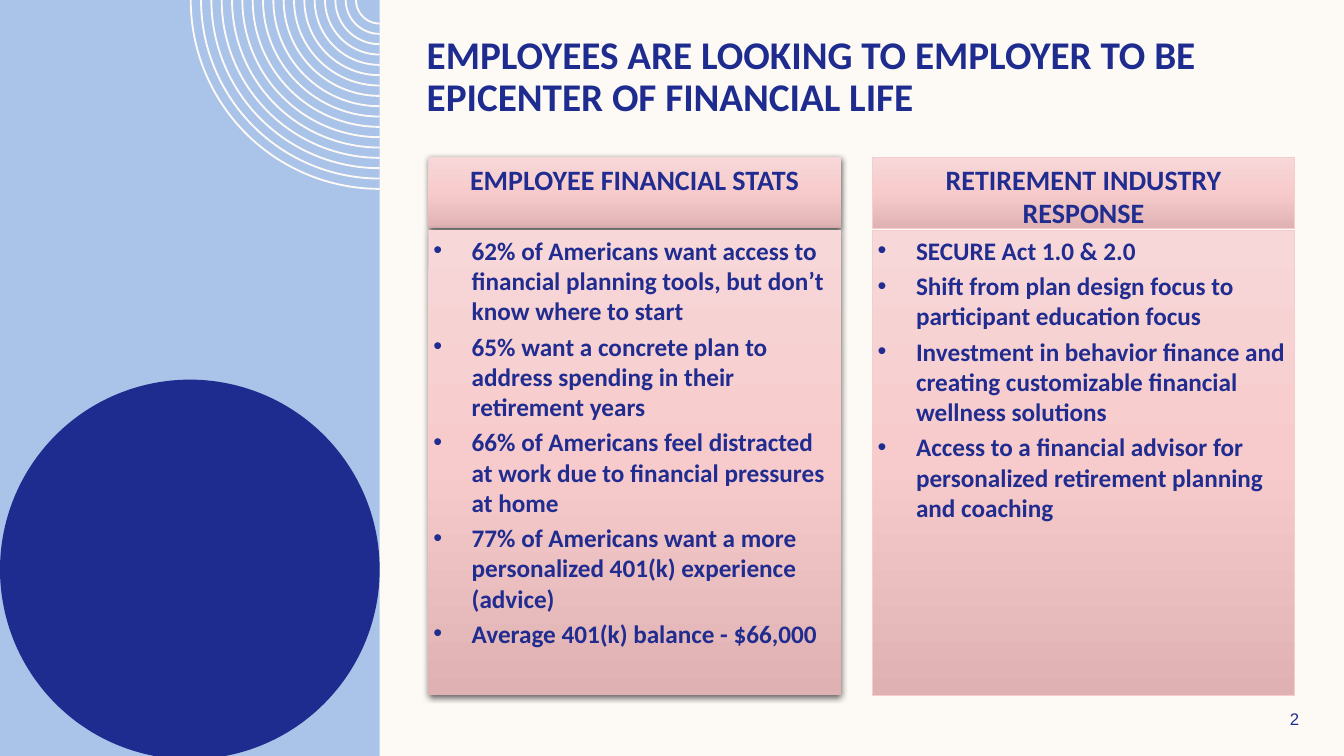
from collections import namedtuple

from lxml import etree
from pptx import Presentation
from pptx.dml.color import RGBColor
from pptx.enum.shapes import MSO_SHAPE as Preset
from pptx.enum.text import MSO_ANCHOR as Anchor, PP_ALIGN as Align
from pptx.oxml.ns import qn
from pptx.util import Inches, Pt

COLORS = {
    "cream": "FDFAF6", "sky": "AAC3E8", "navy": "1F2C8F", "ink": "202C8F",
    "card_top": "F7D7D8", "card_middle": "F7CBCC", "card_bottom": "DFB1B2",
    "card_edge": "F5CDCE", "shadow": "000000",
}
COLUMNS, ROWS = 160, 90
CELL = Inches(7.5) / ROWS
HEADER_ROWS, HEADER_GAP = 8.5, 0.2
RING_COUNT, RING_STEP, RING_WIDTH = 17, 1.23, 0.22

Box = namedtuple("Box", "left top width height")
SIDE_PANEL = Box(0, 0, 45.2, ROWS)
TITLE = Box(49.6, 3.6, 108.6, 10.1)
STATS = Box(51, 18.7, 49.1, 64.1)
RESPONSE = Box(103.9, 18.7, 50.2, 64.1)
PAGE_NUMBER = Box(148.1, 83.8, 12, 3.6)

STATS_POINTS = [
    "62% of Americans want access to financial planning tools, but don’t know where to start",
    "65% want a concrete plan to address spending in their retirement years",
    "66% of Americans feel distracted at work due to financial pressures at home",
    "77% of Americans want a more personalized 401(k) experience (advice)",
    "Average 401(k) balance - $66,000",
]
RESPONSE_POINTS = [
    "SECURE Act 1.0 & 2.0",
    "Shift from plan design focus to participant education focus",
    "Investment in behavior finance and creating customizable financial wellness solutions",
    "Access to a financial advisor for personalized retirement planning and coaching",
]


def cells(count):
    return round(count * CELL)


def place(box):
    return [cells(length) for length in box]


def color(name):
    return RGBColor.from_string(COLORS[name])


def style(paragraph, size, ink, bold=True, face="Calibri"):
    for run in paragraph.runs:
        run.font.name = face
        run.font.size = Pt(size)
        run.font.bold = bold
        run.font.color.rgb = color(ink)


def add_plain(slide, preset, box, fill):
    plain = slide.shapes.add_shape(preset, *place(box))
    plain.shadow.inherit = False
    plain.fill.solid()
    plain.fill.fore_color.rgb = color(fill)
    plain.line.fill.background()


def add_rings(slide, center_column, outer_radius):
    radii = [cells(outer_radius - RING_WIDTH / 2 - index * RING_STEP)
             for index in range(RING_COUNT)]
    center = cells(center_column)
    builder = slide.shapes.build_freeform(center - radii[0], 0, scale=1.0)
    for index, radius in enumerate(radii):
        if index:
            builder.move_to(center - radius, 0)
        builder.add_line_segments([(center, radius)], close=False)
    rings = builder.convert_to_shape()
    segments = list(rings._element.spPr.iter(qn("a:lnTo")))
    for segment, radius in zip(segments, radii):
        quarter = etree.Element(qn("a:arcTo"), wR=str(radius), hR=str(radius),
                                stAng="10800000", swAng="-5400000")
        segment.getparent().replace(segment, quarter)
    rings.shadow.inherit = False
    rings.fill.background()
    rings.line.color.rgb = color("cream")
    rings.line.width = cells(RING_WIDTH)


def add_side_panel(slide, box):
    add_plain(slide, Preset.RECTANGLE, box, "sky")
    add_rings(slide, box.left + box.width, box.width / 2)
    add_plain(slide, Preset.OVAL, Box(box.left, box.width, box.width, box.width), "navy")


def fill_gradient(card):
    card.fill.gradient()
    card.fill.gradient_angle = 270
    stops = card._element.spPr.find(qn("a:gradFill")).find(qn("a:gsLst"))
    for stop in list(stops):
        stops.remove(stop)
    for position, name in enumerate(("card_top", "card_middle", "card_bottom")):
        stop = etree.SubElement(stops, qn("a:gs"), pos=str(position * 50000))
        etree.SubElement(stop, qn("a:srgbClr"), val=COLORS[name])


def cast_shadow(card):
    effects = card._element.spPr.find(qn("a:effectLst"))
    shadow = etree.SubElement(effects, qn("a:outerShdw"), blurRad=str(Pt(4.5)),
                              dist=str(Pt(1.5)), dir="5400000", algn="ctr", rotWithShape="0")
    tint = etree.SubElement(shadow, qn("a:srgbClr"), val=COLORS["shadow"])
    etree.SubElement(tint, qn("a:alpha"), val="63000")


def add_card(slide, box, raised):
    card = slide.shapes.add_shape(Preset.RECTANGLE, *place(box))
    card.shadow.inherit = False
    fill_gradient(card)
    if raised:
        card.line.fill.background()
        cast_shadow(card)
    else:
        card.line.color.rgb = color("card_edge")
        card.line.width = Pt(0.5)
    card.text_frame.word_wrap = True
    card.text_frame.vertical_anchor = Anchor.TOP
    return card.text_frame


def add_bullet(paragraph):
    properties = paragraph._p.get_or_add_pPr()
    indent = Inches(0.38)
    properties.set("marL", str(indent))
    properties.set("indent", str(-indent))
    etree.SubElement(properties, qn("a:buFont"), typeface="Arial")
    etree.SubElement(properties, qn("a:buChar"), char="•")


def add_topic(slide, box, heading, points, raised):
    header = add_card(slide, box._replace(height=HEADER_ROWS), raised)
    header.text = heading
    header.paragraphs[0].alignment = Align.CENTER
    style(header.paragraphs[0], 20, "ink")

    offset = HEADER_ROWS + HEADER_GAP
    body = add_card(slide, box._replace(top=box.top + offset, height=box.height - offset), raised)
    body.margin_left = body.margin_right = body.margin_top = body.margin_bottom = Inches(0.05)
    body.text = "\n".join(points)
    for index, point in enumerate(body.paragraphs):
        add_bullet(point)
        point.alignment = Align.LEFT
        if index:
            point.space_before = Pt(3.6)
        style(point, 18, "ink")


def add_title(slide, box):
    title = slide.shapes.title
    title.left, title.top, title.width, title.height = place(box)
    title.text_frame.text = "EMPLOYEES ARE LOOKING TO EMPLOYER TO BE EPICENTER OF FINANCIAL LIFE"
    title.text_frame.vertical_anchor = Anchor.TOP
    headline = title.text_frame.paragraphs[0]
    headline.alignment = Align.LEFT
    headline.line_spacing = 0.9
    style(headline, 28, "navy")


def add_page_number(slide, box):
    frame = slide.shapes.add_textbox(*place(box)).text_frame
    frame.word_wrap = True
    frame.vertical_anchor = Anchor.MIDDLE
    frame.text = "2"
    frame.paragraphs[0].alignment = Align.CENTER
    style(frame.paragraphs[0], 12, "navy", bold=False, face="Arial")


def main():
    deck = Presentation()
    deck.slide_width, deck.slide_height = cells(COLUMNS), cells(ROWS)
    slide = deck.slides.add_slide(deck.slide_layouts[5])
    slide.background.fill.solid()
    slide.background.fill.fore_color.rgb = color("cream")
    add_side_panel(slide, SIDE_PANEL)
    add_title(slide, TITLE)
    add_topic(slide, STATS, "EMPLOYEE FINANCIAL STATS", STATS_POINTS, raised=True)
    add_topic(slide, RESPONSE, "RETIREMENT INDUSTRY RESPONSE", RESPONSE_POINTS, raised=False)
    add_page_number(slide, PAGE_NUMBER)
    deck.save("out.pptx")


if __name__ == "__main__":
    main()
